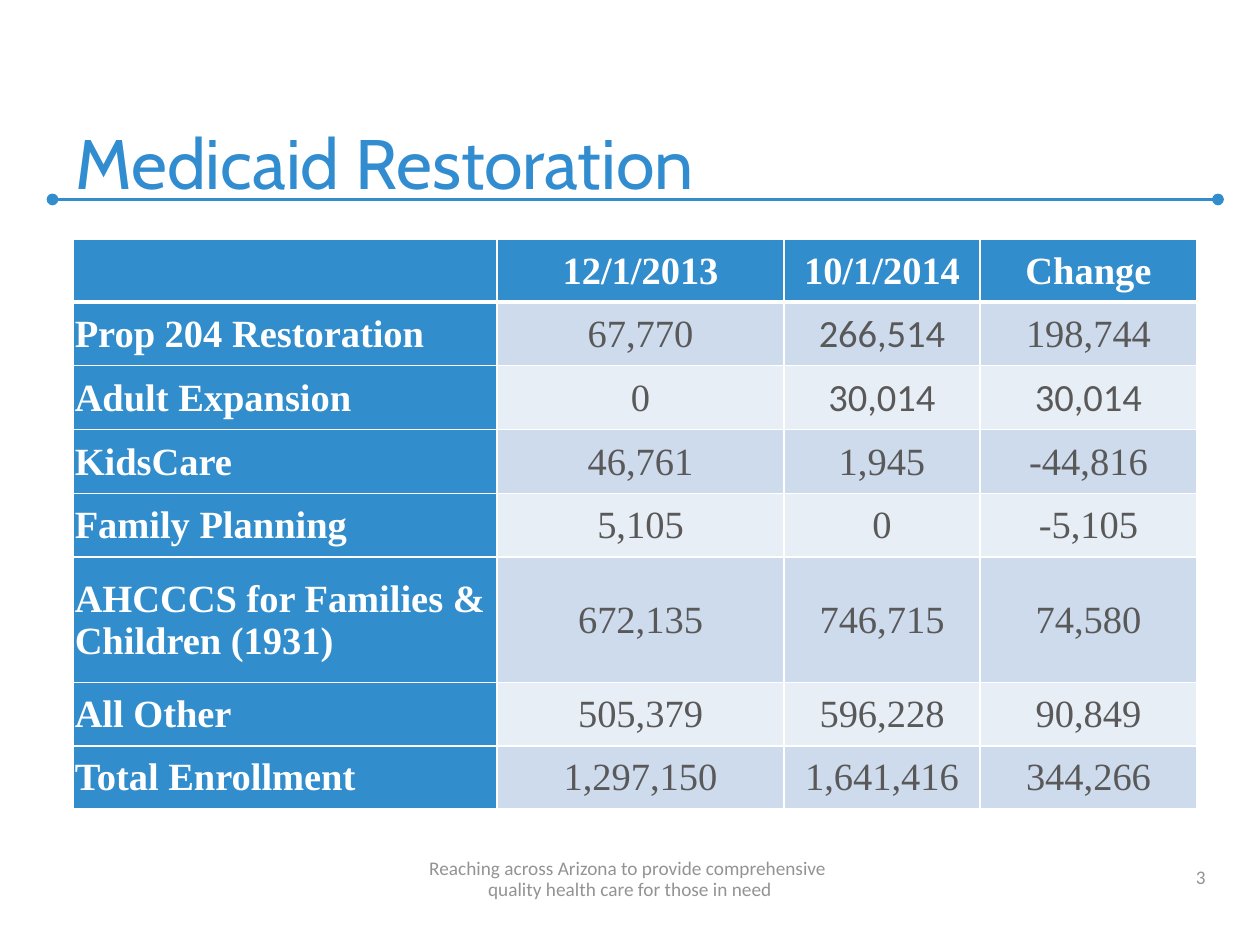
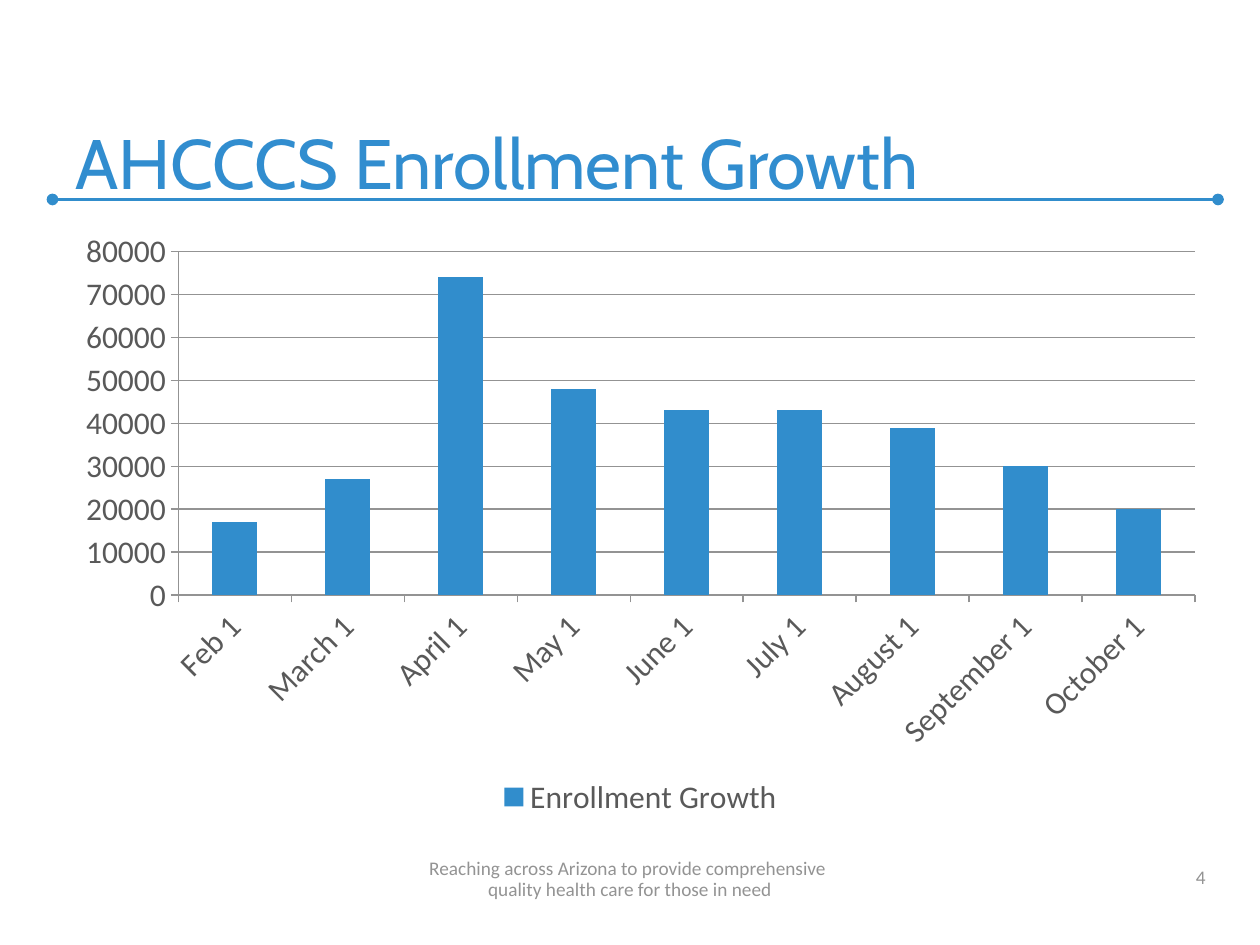
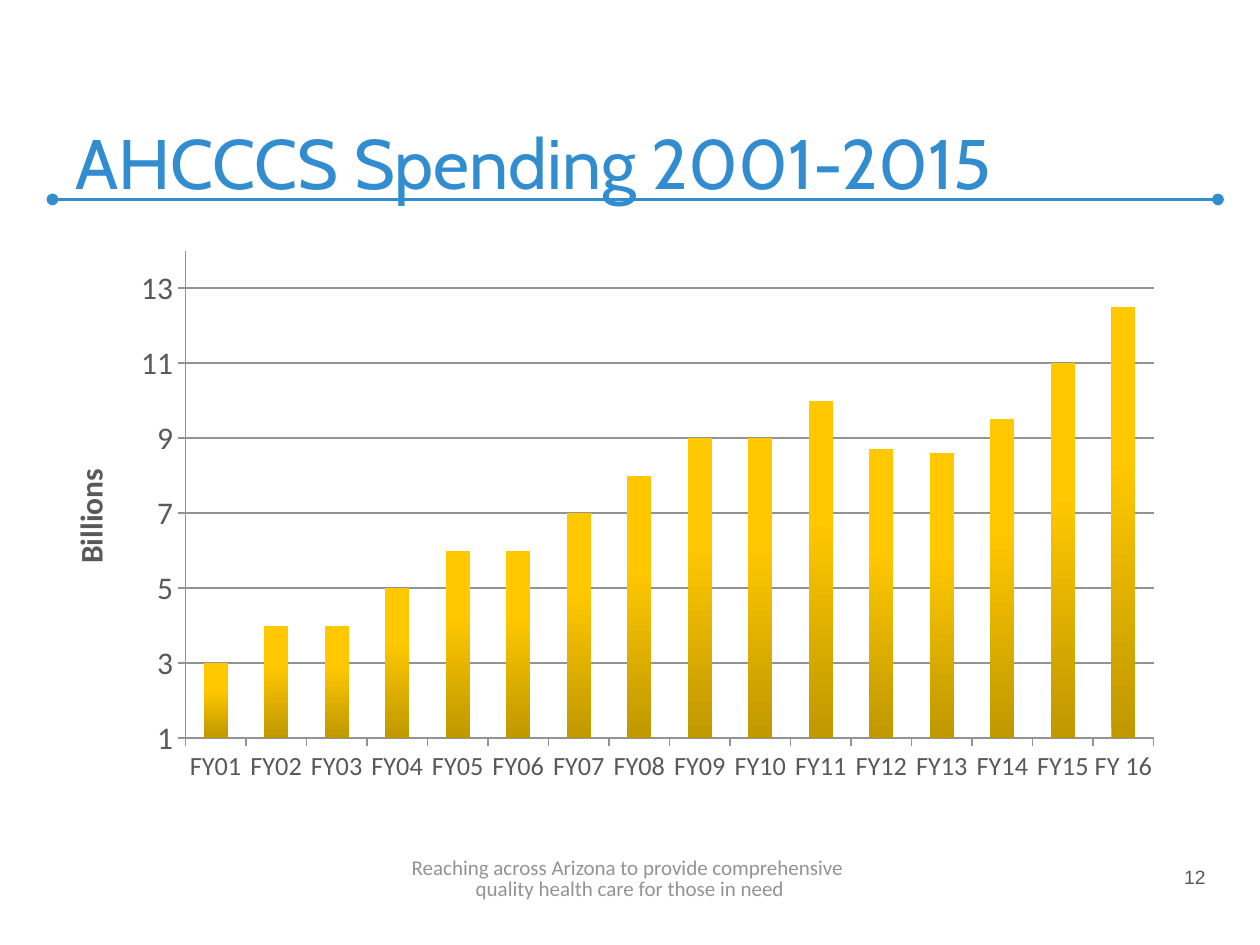
import pptx
import pptx.chart.data
import pptx.dml.color
import pptx.enum.chart
import pptx.enum.shapes
import pptx.enum.text
import pptx.oxml
import pptx.oxml.ns
import pptx.util

Pt = pptx.util.Pt
RGBColor = pptx.dml.color.RGBColor
ALIGN = pptx.enum.text.PP_ALIGN
ANCHOR = pptx.enum.text.MSO_ANCHOR
CHART = pptx.enum.chart
qn = pptx.oxml.ns.qn
nsdecls = pptx.oxml.ns.nsdecls

BLUE = RGBColor(0x31, 0x8D, 0xCC)
TITLE_BLUE = RGBColor(0x31, 0x8D, 0xCF)
WHITE = RGBColor(0xFF, 0xFF, 0xFF)
DARK_GRAY = RGBColor(0x59, 0x59, 0x59)
FOOTER_GRAY = RGBColor(0x93, 0x93, 0x93)
GRID_GRAY = RGBColor(0x93, 0x93, 0x93)
BAND_DARK = RGBColor(0xCE, 0xDB, 0xEC)
BAND_LIGHT = RGBColor(0xE8, 0xEE, 0xF6)
GOLD = RGBColor(0xFF, 0xC8, 0x00)
DARK_GOLD = RGBColor(0xC0, 0x98, 0x00)

FOOTER = ("Reaching across Arizona to provide comprehensive \v"
          "quality health care for those in need")


def write_text(frame, text, size, color, font="Calibri", bold=False,
               align=ALIGN.LEFT, spacing=None):
    paragraph = frame.paragraphs[0]
    paragraph.text = text
    paragraph.alignment = align
    paragraph.line_spacing = spacing
    for run in paragraph.runs:
        run.font.name = font
        run.font.size = Pt(size)
        run.font.bold = bold
        run.font.color.rgb = color


def add_column_chart(slide, width, categories, series_name, values):
    """Add a column chart in the house style and return it."""
    data = pptx.chart.data.CategoryChartData()
    data.categories = categories
    data.add_series(series_name, values)
    chart = slide.shapes.add_chart(
        CHART.XL_CHART_TYPE.COLUMN_CLUSTERED,
        Pt(36), Pt(126), Pt(width), Pt(344), data).chart
    chart.has_title = False
    chart.has_legend = False
    chart.font.name = "Calibri"
    chart.font.size = Pt(18)
    chart.font.color.rgb = DARK_GRAY
    chart.plots[0].gap_width = 150
    chart.plots[0].vary_by_categories = False
    chart.value_axis.has_major_gridlines = True
    for axis in (chart.category_axis, chart.value_axis):
        axis.major_tick_mark = CHART.XL_TICK_MARK.OUTSIDE
        axis.minor_tick_mark = CHART.XL_TICK_MARK.NONE
    for line in (chart.category_axis.format.line, chart.value_axis.format.line,
                 chart.value_axis.major_gridlines.format.line):
        line.color.rgb = GRID_GRAY
        line.width = Pt(0.75)
    return chart


deck = pptx.Presentation()
deck.slide_width = Pt(720)
deck.slide_height = Pt(540)

# Title, rule, footer and page number of every slide
pages = [
    ("Medicaid Restoration", "3", 11, "Calibri", FOOTER_GRAY),
    ("AHCCCS Enrollment Growth", "4", 11, "Calibri", FOOTER_GRAY),
    ("AHCCCS Spending 2001-2015", "12", 12, "Arial", DARK_GRAY),
]
slides = []
for title, number, footer_size, number_font, number_color in pages:
    slide = deck.slides.add_slide(deck.slide_layouts[6])
    slides.append(slide)

    rule = slide.shapes.add_connector(
        pptx.enum.shapes.MSO_CONNECTOR.STRAIGHT,
        Pt(30), Pt(114), Pt(696), Pt(114))
    rule.line.color.rgb = BLUE
    rule.line.width = Pt(2.25)
    outline = rule.line._get_or_add_ln()
    for end in ("headEnd", "tailEnd"):
        outline.append(pptx.oxml.parse_xml(
            f'<a:{end} {nsdecls("a")} type="oval"/>'))
    rule._element.spPr.append(pptx.oxml.parse_xml(
        f'<a:effectLst {nsdecls("a")}/>'))

    for place, text, style in [
        ((36, 24, 648, 96), title,
         dict(size=40, color=TITLE_BLUE, font="Cabin")),
        ((0, 488, 720, 30), FOOTER,
         dict(size=footer_size, color=FOOTER_GRAY, align=ALIGN.CENTER,
              spacing=Pt(12))),
        ((528, 488, 168, 23), number,
         dict(size=11, color=number_color, font=number_font,
              align=ALIGN.RIGHT)),
    ]:
        frame = slide.shapes.add_textbox(*map(Pt, place)).text_frame
        frame.word_wrap = True
        frame.vertical_anchor = ANCHOR.BOTTOM
        write_text(frame, text, **style)

restoration, growth, spending = slides

# Enrollment table
enrollment = [
    ("", "12/1/2013", "10/1/2014", "Change"),
    ("Prop 204 Restoration", "67,770", "266,514", "198,744"),
    ("Adult Expansion", "0", "30,014", "30,014"),
    ("KidsCare", "46,761", "1,945", "-44,816"),
    ("Family Planning", "5,105", "0", "-5,105"),
    ("AHCCCS for Families & Children (1931)", "672,135", "746,715", "74,580"),
    ("All Other", "505,379", "596,228", "90,849"),
    ("Total Enrollment", "1,297,150", "1,641,416", "344,266"),
]
column_widths = [242, 164, 112, 124]
row_heights = [35.5] + [36.5] * 4 + [71.5, 36.5, 35.5]
calibri_cells = {(1, 2), (2, 2), (2, 3)}

table = restoration.shapes.add_table(
    len(enrollment), len(column_widths), Pt(42), Pt(137),
    Pt(sum(column_widths)), Pt(sum(row_heights))).table
for column, width in zip(table.columns, column_widths):
    column.width = Pt(width)
for row, height in zip(table.rows, row_heights):
    row.height = Pt(height)

for r, values in enumerate(enrollment):
    for c, value in enumerate(values):
        cell = table.cell(r, c)
        is_header = r == 0 or c == 0
        cell.margin_left = cell.margin_top = cell.margin_right = Pt(0.72)
        cell.margin_bottom = 0
        cell.vertical_anchor = ANCHOR.MIDDLE
        if value:
            write_text(
                cell.text_frame, value, 22,
                WHITE if is_header else DARK_GRAY,
                font="Calibri" if (r, c) in calibri_cells else "Times New Roman",
                bold=is_header, align=ALIGN.CENTER if c else ALIGN.LEFT)
        for side in "LRTB":
            thick = (r, side) in ((0, "B"), (1, "T"))
            cell._tc.get_or_add_tcPr().append(pptx.oxml.parse_xml(
                f'<a:ln{side} {nsdecls("a")} w="{Pt(3 if thick else 1)}">'
                f'<a:solidFill><a:srgbClr val="{WHITE}"/></a:solidFill>'
                f'</a:ln{side}>'))
        cell.fill.solid()
        cell.fill.fore_color.rgb = (
            BLUE if is_header else BAND_DARK if r % 2 else BAND_LIGHT)

# Enrollment growth chart
growth_chart = add_column_chart(
    growth, 660,
    ["Feb 1", "March 1", "April 1", "May 1", "June 1", "July 1", "August 1",
     "September 1", "October 1"],
    "Enrollment Growth",
    [17000, 27000, 74000, 48000, 43000, 43000, 39000, 30000, 20000])
growth_chart.has_legend = True
growth_chart.legend.position = CHART.XL_LEGEND_POSITION.BOTTOM
growth_chart.legend.include_in_layout = False
growth_fill = growth_chart.plots[0].series[0].format.fill
growth_fill.solid()
growth_fill.fore_color.rgb = BLUE

# Spending chart
spending_chart = add_column_chart(
    spending, 636,
    [f"FY{year:02}" for year in range(1, 16)] + ["FY 16"],
    "Series 1",
    [3, 4, 4, 5, 6, 6, 7, 8, 9, 9, 10, 8.7, 8.6, 9.5, 11, 12.5])
spending_chart.category_axis.tick_labels.font.size = Pt(15)
billions = spending_chart.value_axis
billions.minimum_scale = 1
billions.maximum_scale = 14
billions.major_unit = 2
billions.tick_labels.number_format = "0"
billions.tick_labels.number_format_is_linked = False
write_text(billions.axis_title.text_frame, "Billions", 18, DARK_GRAY,
           bold=True, align=ALIGN.CENTER)

spending_fill = spending_chart.plots[0].series[0].format.fill
spending_fill.gradient()
spending_fill.gradient_angle = 90
for stop, color, position in zip(spending_fill.gradient_stops,
                                 (DARK_GOLD, GOLD), (0, 0.65)):
    stop.color.rgb = color
    stop.position = position

plot_area = spending_chart._chartSpace.chart.plotArea
for automatic_layout in plot_area.findall(qn("c:layout")):
    plot_area.remove(automatic_layout)
plot_area.insert(0, pptx.oxml.parse_xml(
    f'<c:layout {nsdecls("c")}><c:manualLayout>'
    '<c:layoutTarget val="inner"/>'
    '<c:xMode val="edge"/><c:yMode val="edge"/>'
    '<c:x val="0.11"/><c:y val="0.05"/><c:w val="0.87"/><c:h val="0.81"/>'
    '</c:manualLayout></c:layout>'))

deck.save("out.pptx")
